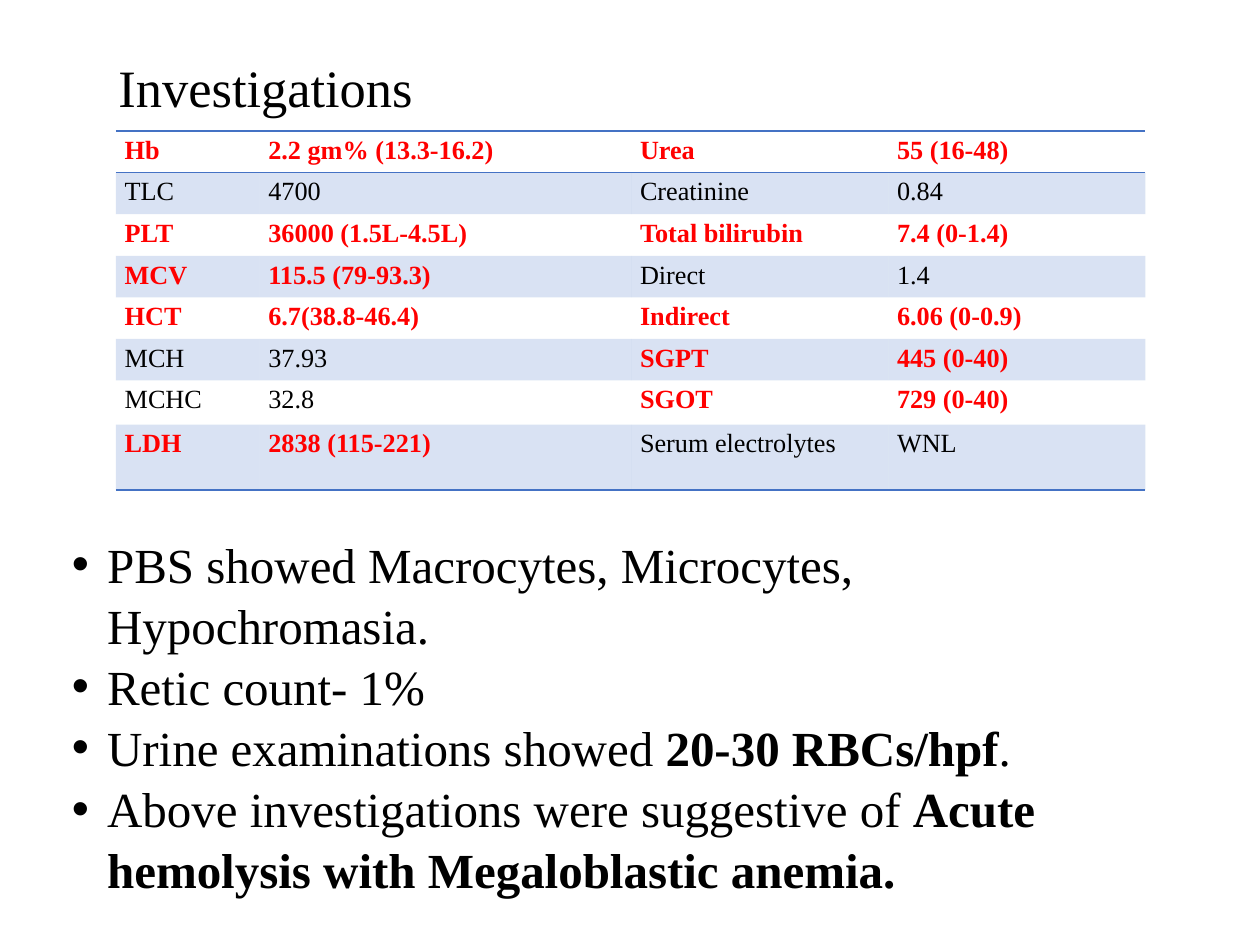
from lxml.etree import SubElement
from pptx import Presentation
from pptx.dml.color import RGBColor
from pptx.enum.text import MSO_ANCHOR, MSO_AUTO_SIZE, PP_ALIGN
from pptx.oxml import parse_xml
from pptx.oxml.ns import nsdecls, qn
from pptx.util import Inches, Pt

FONT = "Times New Roman"
BLACK = RGBColor(0x00, 0x00, 0x00)
RED = RGBColor(0xFF, 0x00, 0x00)
BLUE = RGBColor(0x44, 0x72, 0xC4)
PLAIN_TABLE_STYLE = "{2D5ABB26-0587-4C30-8999-92F81FD0307C}"

COLUMN_WIDTHS = [1.14, 2.95, 2.04, 2.04]
ROW_HEIGHTS = [0.33] * 6 + [0.35, 0.52]
RESULTS = [
    ("Hb", "2.2 gm% (13.3-16.2)", "Urea", "55 (16-48)"),
    ("TLC", "4700", "Creatinine", "0.84"),
    ("PLT", "36000 (1.5L-4.5L)", "Total bilirubin", "7.4 (0-1.4)"),
    ("MCV", "115.5 (79-93.3)", "Direct", "1.4"),
    ("HCT", "6.7(38.8-46.4)", "Indirect", "6.06 (0-0.9)"),
    ("MCH", "37.93", "SGPT", "445 (0-40)"),
    ("MCHC", "32.8", "SGOT", "729 (0-40)"),
    ("LDH", "2838 (115-221)", "Serum electrolytes", "WNL"),
]
FINDINGS = [
    [("PBS showed Macrocytes, Microcytes, Hypochromasia.", False)],
    [("Retic count- 1%", False)],
    [("Urine examinations showed ", False), ("20-30 RBCs/hpf", True), (".", False)],
    [("Above investigations were suggestive of ", False),
     ("Acute hemolysis with Megaloblastic anemia.", True)],
]


def place(shape, left, top, width, height):
    """Move and size a shape, in inches."""
    shape.left, shape.top = Inches(left), Inches(top)
    shape.width, shape.height = Inches(width), Inches(height)


def add_run(paragraph, text, size, bold=False, color=BLACK):
    """Append one formatted run to a paragraph."""
    run = paragraph.add_run()
    run.text = text
    run.font.name = FONT
    run.font.size = Pt(size)
    run.font.bold = bold
    run.font.color.rgb = color


def fill_title(title):
    """Place and write the slide title."""
    place(title, 0.84, 0.26, 8.62, 0.91)
    title.text_frame.vertical_anchor = MSO_ANCHOR.MIDDLE
    heading = title.text_frame.paragraphs[0]
    heading.alignment = PP_ALIGN.LEFT
    heading.line_spacing = 0.9
    add_run(heading, "Investigations", 30)


def shade(cell):
    """Fill a cell with translucent blue."""
    cell.fill.solid()
    cell.fill.fore_color.rgb = BLUE
    tint = cell._tc.tcPr.find(f".//{qn('a:srgbClr')}")
    SubElement(tint, qn("a:alpha"), val="20000")


def add_rules(cell, sides):
    """Draw blue rules on the given sides of a cell."""
    properties = cell._tc.get_or_add_tcPr()
    for position, side in enumerate(sides):
        rule = parse_xml(
            f'<a:ln{side} {nsdecls("a")} w="{Pt(1)}"><a:solidFill>'
            f'<a:srgbClr val="{BLUE}"/></a:solidFill></a:ln{side}>')
        properties.insert(position, rule)


def add_results_table(slide):
    """Add the results, with values outside their quoted range in red."""
    frame = slide.shapes.add_table(
        len(RESULTS), len(COLUMN_WIDTHS), Inches(0.92), Inches(1.04),
        Inches(sum(COLUMN_WIDTHS)), Inches(sum(ROW_HEIGHTS)))
    table = frame.table
    table.first_row = table.horz_banding = False
    frame._element.find(f".//{qn('a:tableStyleId')}").text = PLAIN_TABLE_STYLE
    for column, width in zip(table.columns, COLUMN_WIDTHS):
        column.width = Inches(width)
    rule_sides = {0: "TB", len(RESULTS) - 1: "B"}
    for row_index, result in enumerate(RESULTS):
        table.rows[row_index].height = Inches(ROW_HEIGHTS[row_index])
        for column_index, text in enumerate(result):
            cell = table.cell(row_index, column_index)
            cell.margin_left = cell.margin_right = Inches(0.07)
            cell.margin_top = cell.margin_bottom = Inches(0.04)
            abnormal = "(" in result[column_index // 2 * 2 + 1]
            add_run(cell.text_frame.paragraphs[0], text, 15, abnormal,
                    RED if abnormal else BLACK)
            if row_index % 2:
                shade(cell)
            else:
                cell.fill.background()
            add_rules(cell, rule_sides.get(row_index, ""))


def fill_findings(body):
    """Place and write the bulleted findings."""
    place(body, 0.47, 4.17, 8.62, 2.93)
    text_frame = body.text_frame
    text_frame.auto_size = MSO_AUTO_SIZE.SHAPE_TO_FIT_TEXT
    for index, finding in enumerate(FINDINGS):
        paragraph = text_frame.add_paragraph() if index else text_frame.paragraphs[0]
        paragraph.space_before = Pt(0)
        paragraph.line_spacing = 1.04
        properties = paragraph._p.get_or_add_pPr()
        properties.set("marL", str(Inches(0.28)))
        properties.set("indent", str(Inches(-0.28)))
        SubElement(properties, qn("a:buFont"), typeface="Arial")
        SubElement(properties, qn("a:buChar"), char="•")
        for text, bold in finding:
            add_run(paragraph, text, 28, bold)


def main():
    """Build the investigations slide."""
    presentation = Presentation()
    presentation.slide_width, presentation.slide_height = Inches(10), Inches(7.5)
    slide = presentation.slides.add_slide(presentation.slide_layouts[1])
    fill_title(slide.shapes.title)
    add_results_table(slide)
    fill_findings(slide.placeholders[1])
    presentation.save("out.pptx")


if __name__ == "__main__":
    main()
